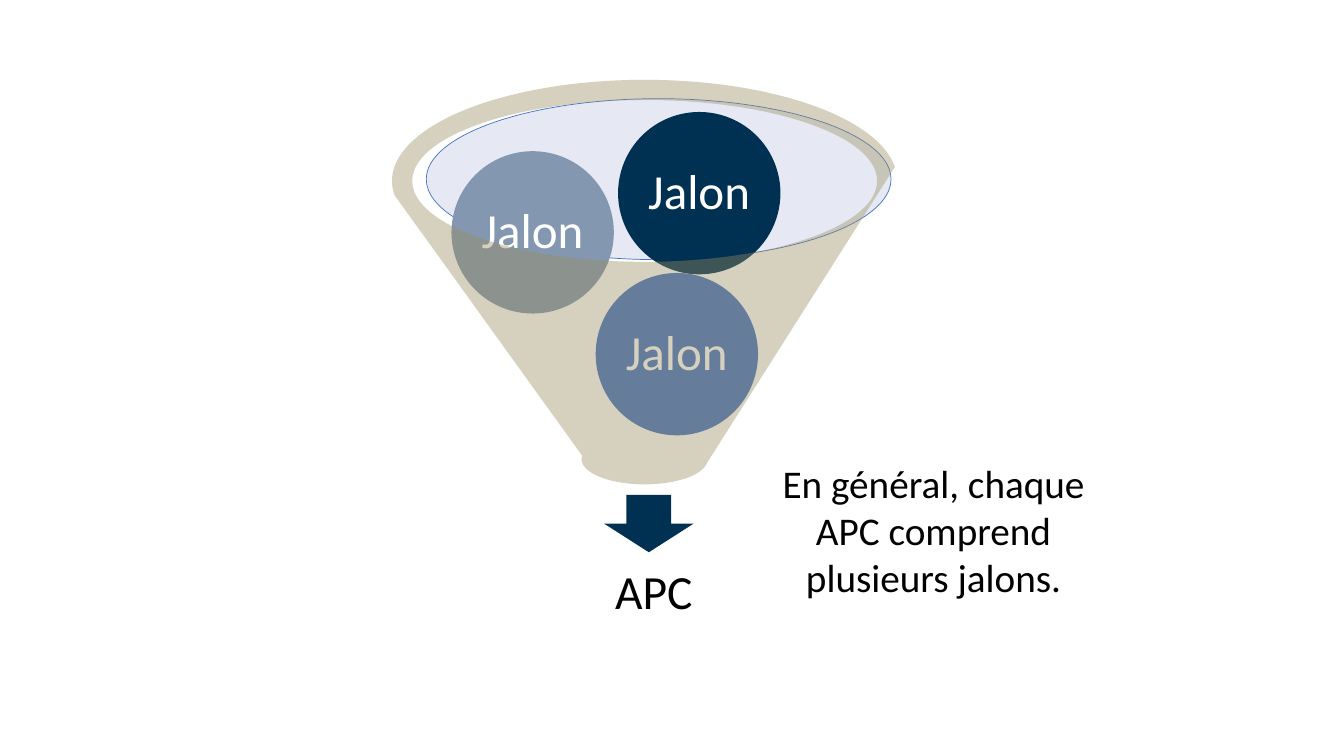
import pptx
import pptx.util
import pptx.dml.color
import pptx.enum.shapes
import pptx.enum.text
import pptx.oxml.ns
import lxml.etree

Pt = pptx.util.Pt
RGBColor = pptx.dml.color.RGBColor
Shapes = pptx.enum.shapes.MSO_SHAPE

NAVY = RGBColor(0x00, 0x31, 0x52)
BLUE = RGBColor(0x44, 0x72, 0xC4)
SLATE = RGBColor(0x84, 0x97, 0xB0)
PALE_BLUE = RGBColor(0xC1, 0xC9, 0xE4)
KHAKI = RGBColor(0x99, 0x8D, 0x5F)
WHITE = RGBColor(0xFF, 0xFF, 0xFF)
BLACK = RGBColor(0x00, 0x00, 0x00)

FONT = "Calibri"
CIRCLE_SIZE = 116
MILESTONES = [(145.5, 138, BLUE), (42.5, 51, SLATE), (161.5, 23, NAVY)]
NOTE_LINES = ["En général, chaque ", "APC comprend ", "plusieurs jalons. "]


def add_filled_shape(slide, kind, left, top, width, height, color, opacity=100):
    shape = slide.shapes.add_shape(kind, Pt(left), Pt(top), Pt(width), Pt(height))
    shape.shadow.inherit = False
    shape.fill.solid()
    shape.fill.fore_color.rgb = color
    shape.line.fill.background()
    if opacity < 100:
        qualified = pptx.oxml.ns.qn
        color_element = shape.fill._xPr.find(".//" + qualified("a:srgbClr"))
        alpha = lxml.etree.SubElement(color_element, qualified("a:alpha"))
        alpha.set("val", str(opacity * 1000))
    return shape


def write_centred(shape, lines, size, color, inset=None, line_spacing=None):
    frame = shape.text_frame
    if inset is not None:
        frame.margin_left = frame.margin_right = Pt(inset)
        frame.margin_top = frame.margin_bottom = Pt(inset)
    paragraph = frame.paragraphs[0]
    paragraph.alignment = pptx.enum.text.PP_ALIGN.CENTER
    paragraph.line_spacing = line_spacing
    for index, line in enumerate(lines):
        if index:
            paragraph.add_line_break()
        run = paragraph.add_run()
        run.text = line
        run.font.name = FONT
        run.font.size = Pt(size)
        run.font.color.rgb = color
    return frame


def add_funnel(slide, left, top, width, height):
    rim = add_filled_shape(slide, Shapes.OVAL, left + 24.5, top + 13.5,
                           332, 115, PALE_BLUE, 40)
    rim.line.color.rgb = BLUE
    rim.line.width = Pt(0.5)

    add_filled_shape(slide, Shapes.DOWN_ARROW, left + 151.5, top + 296.5,
                     64, 41, NAVY)

    result = slide.shapes.add_textbox(Pt(left + 32.5), Pt(top + 329), Pt(309), Pt(77))
    frame = write_centred(result, ["APC"], 34, BLACK, 19, 0.9)
    frame.word_wrap = True
    frame.vertical_anchor = pptx.enum.text.MSO_ANCHOR.MIDDLE

    for offset_x, offset_y, color in MILESTONES:
        circle = add_filled_shape(slide, Shapes.OVAL, left + offset_x, top + offset_y,
                                  CIRCLE_SIZE, CIRCLE_SIZE, color)
        frame = write_centred(circle, ["Jalon"], 35, WHITE, 3.5, 0.9)
        frame.word_wrap = False
        frame.vertical_anchor = pptx.enum.text.MSO_ANCHOR.MIDDLE

    add_filled_shape(slide, Shapes.FUNNEL, left, top, width, height, KHAKI, 40)


def add_note(slide, left, top, width, height):
    note = slide.shapes.add_textbox(Pt(left), Pt(top), Pt(width), Pt(height))
    frame = write_centred(note, NOTE_LINES, 28, BLACK)
    frame.word_wrap = True
    frame.auto_size = pptx.enum.text.MSO_AUTO_SIZE.SHAPE_TO_FIT_TEXT


def main():
    presentation = pptx.Presentation()
    presentation.slide_width = Pt(960)
    presentation.slide_height = Pt(540)
    slide = presentation.slides.add_slide(presentation.slide_layouts[6])
    add_funnel(slide, 280, 57, 361, 289)
    add_note(slide, 490, 324.5, 360, 108.5)
    presentation.save("out.pptx")


if __name__ == "__main__":
    main()
